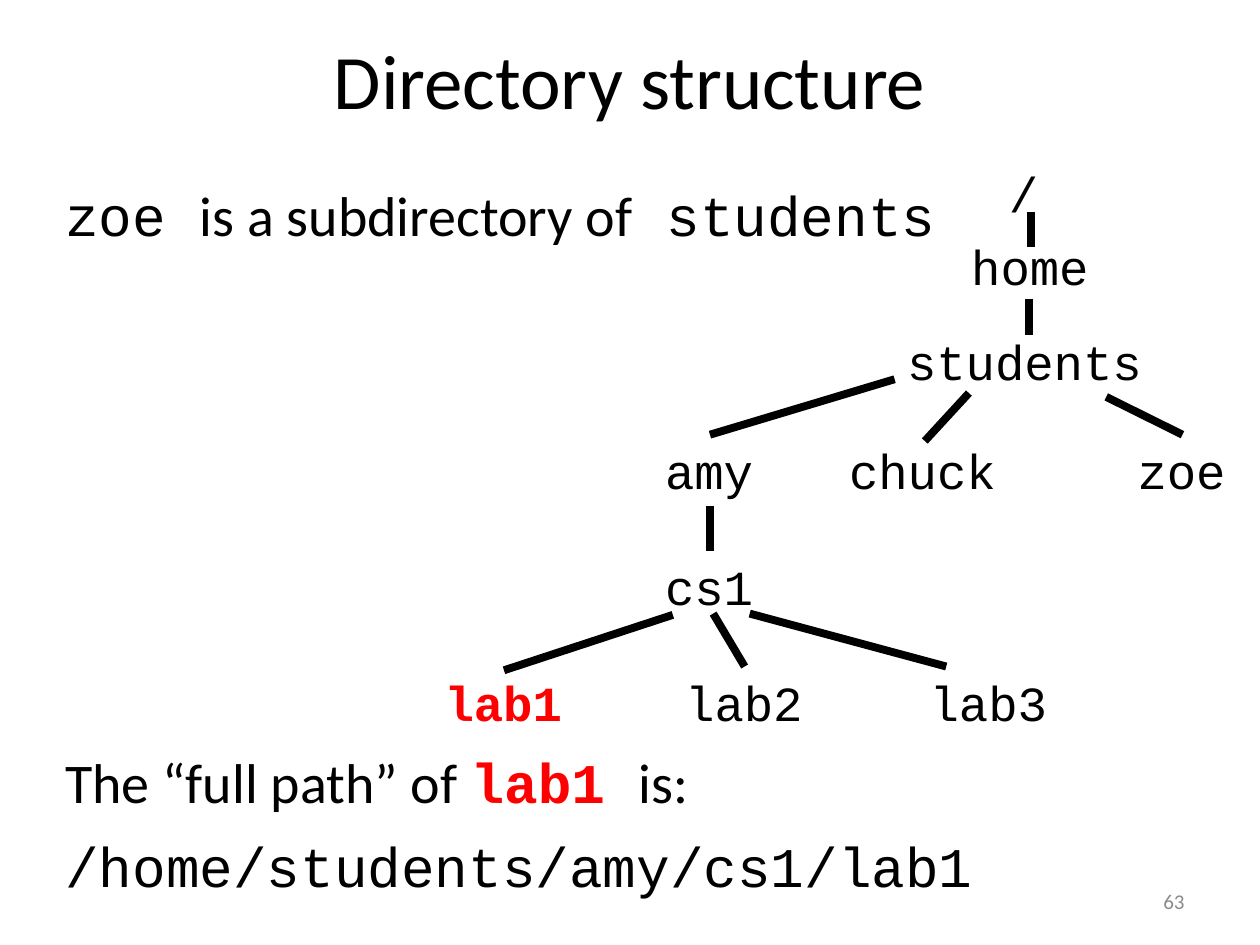
import dataclasses

import pptx
import pptx.dml.color
import pptx.enum.shapes
import pptx.enum.text
import pptx.oxml.ns
import pptx.util
from lxml import etree
from pptx.util import Inches

ALIGN = pptx.enum.text.PP_ALIGN
ANCHOR = pptx.enum.text.MSO_ANCHOR


@dataclasses.dataclass(frozen=True)
class Theme:
    ink: str = "000000"
    accent: str = "FF0000"
    muted: str = "8C8C8C"
    prose: str = "Calibri"
    code: str = "Courier New"
    title: int = 44
    body: int = 32
    node: int = 28
    number: int = 12
    branch: float = 4.5


THEME = Theme()

# Directory: left, top, width, relative to the tree's box
NODE_HEIGHT = 0.57
NODES = {
    "/": (4.48, 0, 0.44),
    "home": (4.18, 0.58, 1.14),
    "students": (3.67, 1.33, 2.08),
    "amy": (1.75, 2.2, 0.91),
    "chuck": (3.21, 2.2, 1.38),
    "zoe": (5.5, 2.2, 0.91),
    "cs1": (1.75, 3.12, 0.91),
    "lab1": (0, 4.04, 1.14),
    "lab2": (1.91, 4.04, 1.14),
    "lab3": (3.85, 4.04, 1.14),
}
# Parent, child, start, end; None stands for the middle of a side
BRANCHES = [
    ("/", "home", (4.75, 0.43), (4.75, 0.71)),
    ("home", "students", (4.74, 1.12), (4.74, 1.41)),
    ("students", "amy", (3.67, 1.76), None),
    ("students", "chuck", (4.26, 1.87), (3.91, 2.25)),
    ("students", "zoe", (5.35, 1.9), None),
    ("amy", "cs1", None, None),
    ("cs1", "lab1", (1.91, 3.63), (0.57, 4.07)),
    ("cs1", "lab2", (2.23, 3.62), None),
    ("cs1", "lab3", (2.52, 3.62), (4.08, 4.04)),
]


def style(run, font, size, color=THEME.ink, bold=False):
    run.font.name = font
    run.font.size = pptx.util.Pt(size)
    run.font.bold = bold
    run.font.color.rgb = pptx.dml.color.RGBColor.from_string(color)


def add_title(slide, text, left, top, width, height):
    title = slide.shapes.title
    title.left, title.top = Inches(left), Inches(top)
    title.width, title.height = Inches(width), Inches(height)
    title.text_frame.text = text
    title.text_frame.vertical_anchor = ANCHOR.MIDDLE
    heading = title.text_frame.paragraphs[0]
    heading.alignment = ALIGN.CENTER
    style(heading.runs[0], THEME.prose, THEME.title)


def add_text(slide, lines, left, top, width, height, size, wrap=True,
             align=ALIGN.LEFT, anchor=ANCHOR.TOP):
    """Each line is a list of (text, font, color, bold) pieces."""
    box = slide.shapes.add_textbox(Inches(left), Inches(top), Inches(width), Inches(height))
    frame = box.text_frame
    frame.word_wrap = wrap
    frame.vertical_anchor = anchor
    for index, pieces in enumerate(lines):
        line = frame.add_paragraph() if index else frame.paragraphs[0]
        line.alignment = align
        if index:
            line.space_before = pptx.util.Pt(10)
        for text, font, color, bold in pieces:
            run = line.add_run()
            run.text = text
            style(run, font, size, color, bold)
    return box


def add_tree(slide, left, top):
    # Directory names
    boxes = {}
    for name, (x, y, width) in NODES.items():
        chosen = name == "lab1"
        piece = (name, THEME.code, THEME.accent if chosen else THEME.ink, chosen)
        boxes[name] = add_text(slide, [[piece]], left + x, top + y, width,
                               NODE_HEIGHT, THEME.node, wrap=False)

    # Branches
    for parent, child, start, end in BRANCHES:
        points = [Inches(offset + value)
                  for point in (start or (0, 0), end or (0, 0))
                  for offset, value in zip((left, top), point)]
        branch = slide.shapes.add_connector(
            pptx.enum.shapes.MSO_CONNECTOR.STRAIGHT, *points)
        if start is None:
            branch.begin_connect(boxes[parent], 2)
        if end is None:
            branch.end_connect(boxes[child], 0)
        branch.line.width = pptx.util.Pt(THEME.branch)
        branch.line.color.rgb = pptx.dml.color.RGBColor.from_string(THEME.ink)
        etree.SubElement(branch._element.spPr, pptx.oxml.ns.qn("a:effectLst"))


def main():
    deck = pptx.Presentation()
    deck.slide_width, deck.slide_height = Inches(10), Inches(7.5)
    slide = deck.slides.add_slide(deck.slide_layouts[5])
    add_title(slide, "Directory structure", 0.5, 0, 9, 1.25)

    # Statements above and below the tree
    prose = (THEME.prose, THEME.ink, False)
    code = (THEME.code, THEME.ink, False)
    relation = [[("zoe ", *code), ("is a subdirectory of", *prose), (" students", *code)]]
    full_path = [
        [("The “full path” of ", *prose), ("lab1 ", THEME.code, THEME.accent, True),
         ("is:", *prose)],
        [("/home/students/amy/cs1/lab1", *code)],
    ]
    add_text(slide, relation, 0.42, 1.38, 9, 0.64, THEME.body)
    add_text(slide, full_path, 0.42, 5.88, 9, 1.3, THEME.body)

    add_tree(slide, 3.43, 1.25)

    # Slide number
    add_text(slide, [[("63", THEME.prose, THEME.muted, False)]], 7.17, 6.95, 2.33, 0.4,
             THEME.number, align=ALIGN.RIGHT, anchor=ANCHOR.MIDDLE)
    deck.save("out.pptx")


if __name__ == "__main__":
    main()
